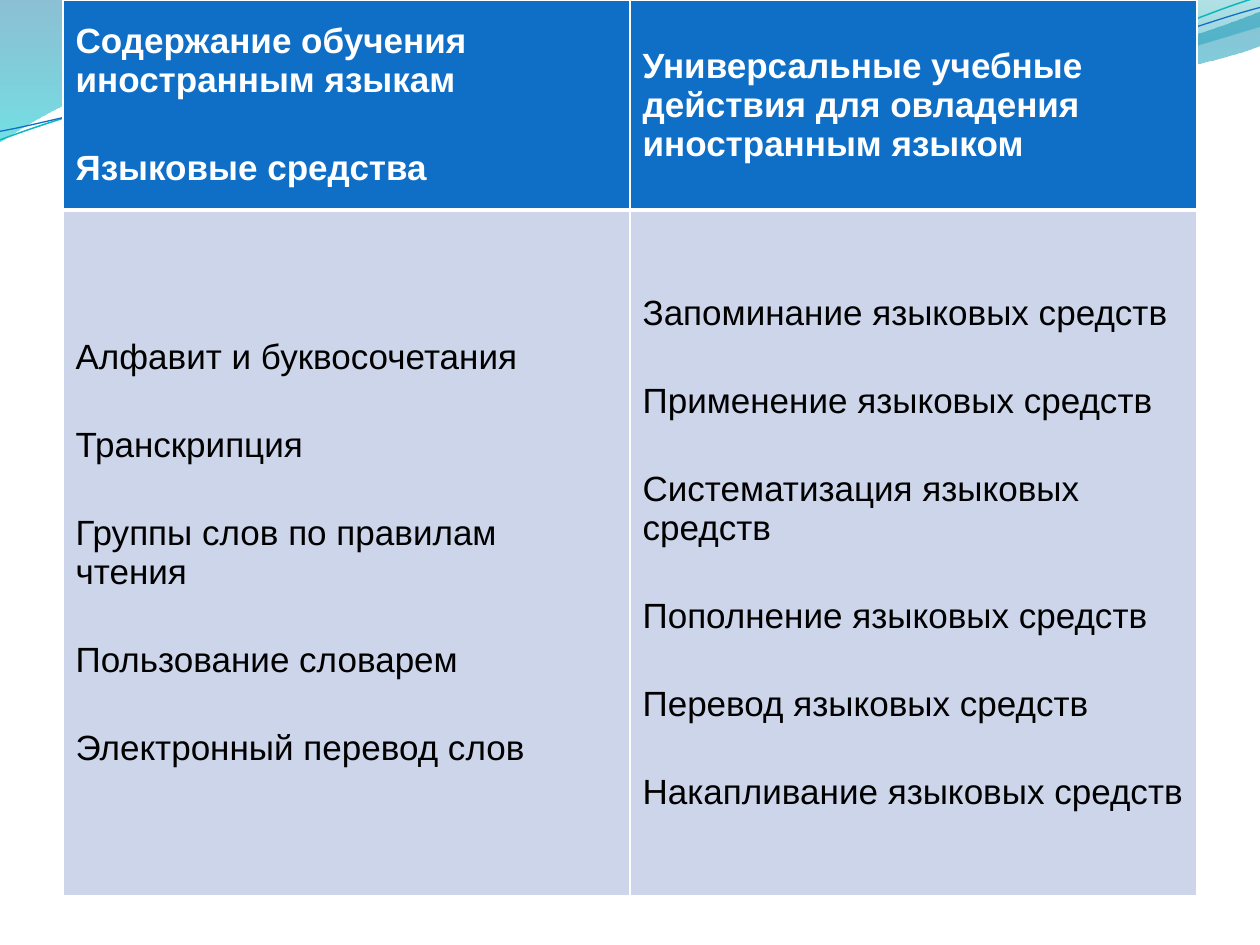
from lxml import etree
from pptx import Presentation
from pptx.dml.color import RGBColor
from pptx.enum import text
from pptx.oxml import parse_xml
from pptx.oxml.ns import nsdecls, qn
from pptx.util import Pt

WHITE = RGBColor(0xFF, 0xFF, 0xFF)
BLACK = RGBColor(0, 0, 0)
BLUE = RGBColor(0x0F, 0x6F, 0xC6)
PALE_BLUE = RGBColor(0xCC, 0xD5, 0xEA)
DEEP_TEAL = RGBColor(0x00, 0x74, 0xA1)
CYAN = RGBColor(0x00, 0xC6, 0xCF)
SEA_GREEN = RGBColor(0x00, 0xA1, 0xA9)
SKY = RGBColor(0x00, 0x8B, 0xBF)
TURQUOISE = RGBColor(0x0A, 0xB8, 0xBF)

# A wave is a start point, then lines (x, y) and cubic curves (x1, y1, x2, y2, x, y).
# Gradient stops are position, colour, opacity in percent.
WAVE_FILLS = [
    ([(0, -0.7), (316.8, -0.7), (342.7, 12.2, 478.1, 45.4, 545.8, 45.4),
      (614.2, 45.4, 689.8, 18.7, 720, 6.5), (720.7, 25.9),
      (707.8, 31.7, 626.4, 54.7, 537.1, 54), (447.8, 54, 275, 20.2, 185, 24.5),
      (92.9, 25.2, 33.1, 59.8, -0.7, 81.4), (0, -0.7)],
     [(0, DEEP_TEAL, 45), (1, CYAN, 55)]),
    ([(344.9, -0.7), (366.5, 7.9, 491, 44.6, 553.7, 46.8),
      (616.3, 49.7, 691.9, 23, 720, 15.1), (720, 0), (344.9, -0.7)],
     [(0, SEA_GREEN, 30), (0.8, SKY, 45)]),
]
WAVE_LINES = [
    ([(-1.4, 63), (33.8, 51.7, 114.1, 29.4, 199.8, 29.9),
      (284.8, 30.3, 425.8, 67.3, 512.4, 64.9), (599, 62.4, 676.5, 25.7, 720.2, 15.5)],
     TURQUOISE, 0.85),
    ([(-1.1, 58), (32.9, 53.8, 118.3, 32.5, 204.1, 33),
      (290.6, 33.4, 428.9, 63.1, 515.5, 61.4), (601.3, 59.6, 678.4, 30.1, 721.4, 21.3)],
     BLUE, 0.75),
]
WAVE_LINE_ROTATION = 357.3

# Each cell is a list of paragraphs: text, then whether a gap stands above it.
HEADERS = [
    [("Содержание обучения", False), ("иностранным языкам", False),
     ("Языковые средства", True)],
    [("Универсальные учебные действия для овладения иностранным языком", False)],
]
TOPICS = ["Алфавит и буквосочетания", "Транскрипция", "Группы слов по правилам чтения",
          "Пользование словарем", "Электронный перевод слов"]
ACTIONS = [f"{action} языковых средств" for action in (
    "Запоминание", "Применение", "Систематизация", "Пополнение", "Перевод", "Накапливание")]
BODY = [[(line, index > 0) for index, line in enumerate(lines)] for lines in (TOPICS, ACTIONS)]
PARAGRAPH_GAP = Pt(28)


def add_wave(segments, close):
    """Build a freeform through all points, then join each curve's three into a Bezier."""
    points = [(Pt(segment[i]), Pt(segment[i + 1]))
              for segment in segments for i in range(0, len(segment), 2)]
    builder = slide.shapes.build_freeform(*points[0])
    builder.add_line_segments(points[1:], close=close)
    shape = builder.convert_to_shape()
    shape.shadow.inherit = False
    lines = iter(list(shape._element.iter(qn("a:lnTo"))))
    for segment in segments[1:]:
        first = next(lines)
        if len(segment) == 6:
            first.tag = qn("a:cubicBezTo")
            for line in (next(lines), next(lines)):
                first.append(line[0])
                line.getparent().remove(line)
    return shape


def set_borders(cell, widths):
    properties = cell._tc.get_or_add_tcPr()
    for index, (side, width) in enumerate(widths.items()):
        properties.insert(index, parse_xml(
            f'<a:ln{side} {nsdecls("a")} w="{Pt(width)}"><a:solidFill>'
            f'<a:srgbClr val="{WHITE}"/></a:solidFill></a:ln{side}>'))


presentation = Presentation()
presentation.slide_width, presentation.slide_height = Pt(720), Pt(540)
slide = presentation.slides.add_slide(presentation.slide_layouts[6])

for segments, stops in WAVE_FILLS:
    shape = add_wave(segments, close=True)
    shape.line.fill.background()
    shape.fill.gradient()
    shape.fill.gradient_angle = 270
    for stop, (position, colour, _) in zip(shape.fill.gradient_stops, stops):
        stop.position = position
        stop.color.rgb = colour
    for element, (_, _, opacity) in zip(shape._element.spPr.iter(qn("a:srgbClr")), stops):
        etree.SubElement(element, qn("a:alpha")).set("val", str(opacity * 1000))

for segments, colour, width in WAVE_LINES:
    shape = add_wave(segments, close=False)
    shape.rotation = WAVE_LINE_ROTATION
    shape.fill.background()
    shape.line.color.rgb = colour
    shape.line.width = Pt(width)

table = slide.shapes.add_table(2, 2, Pt(36), Pt(0), Pt(648), Pt(512)).table
for column in table.columns:
    column.width = Pt(324)
table.rows[0].height, table.rows[1].height = Pt(120), Pt(392)

ROW_STYLES = [
    (HEADERS, BLUE, WHITE, True, {"L": 1, "R": 1, "T": 1, "B": 3}),
    (BODY, PALE_BLUE, BLACK, False, {"L": 1, "R": 1, "T": 3, "B": 1}),
]
for row, (contents, fill, colour, bold, borders) in enumerate(ROW_STYLES):
    for column, lines in enumerate(contents):
        cell = table.cell(row, column)
        cell.fill.solid()
        cell.fill.fore_color.rgb = fill
        cell.vertical_anchor = text.MSO_ANCHOR.MIDDLE
        set_borders(cell, borders)
        cell.text = "\n".join(line for line, _ in lines)
        for paragraph, (_, gap) in zip(cell.text_frame.paragraphs, lines):
            paragraph.font.name = "Arial"
            paragraph.font.size = Pt(20)
            paragraph.font.bold = bold
            paragraph.font.color.rgb = colour
            if gap:
                paragraph.space_before = PARAGRAPH_GAP

presentation.save("out.pptx")
